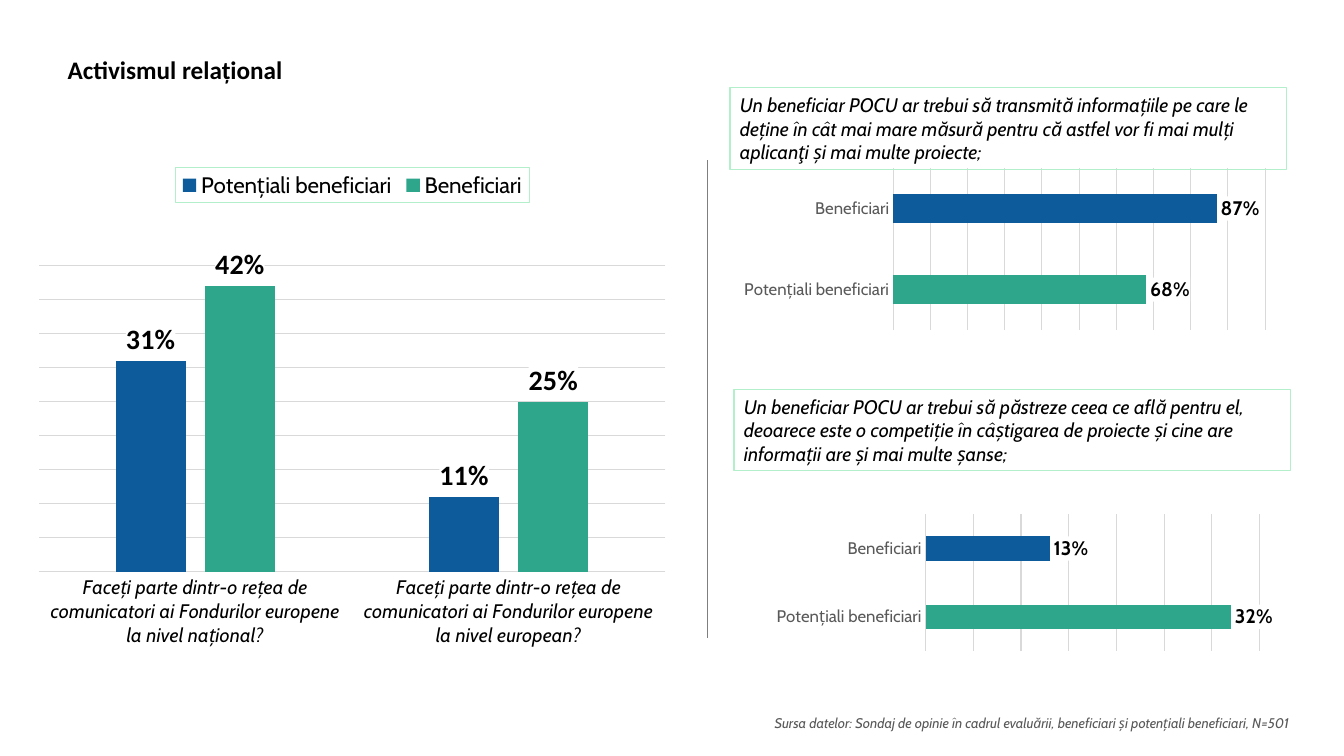
import pptx
import pptx.chart.data
import pptx.dml.color
import pptx.enum.chart
import pptx.enum.shapes
import pptx.enum.text
import pptx.oxml
import pptx.oxml.ns
import pptx.util
from pptx.util import Inches

BLUE, GREEN, MINT = "0D5B9B", "2EA68B", "B4EFCC"
BLACK, GREY, GRID, WHITE = "000000", "595959", "D9D9D9", "FFFFFF"
NS = pptx.oxml.ns.nsdecls("a", "c")


def rgb(value):
    return pptx.dml.color.RGBColor.from_string(value)


def style_font(font, size, color=BLACK, name="Cabin", bold=False, italic=False):
    font.size = pptx.util.Pt(size)
    font.name = name
    font.bold = bold
    font.italic = italic
    font.color.rgb = rgb(color)


def style_line(line, color, width):
    line.color.rgb = rgb(color)
    line.width = pptx.util.Pt(width)


def add_run(p, text, size, **style):
    r = p.add_run()
    r.text = text
    style_font(r.font, size, **style)


def add_title(s, text):
    sp = s.shapes.title
    sp.left, sp.top = Inches(0.67), Inches(0.3)
    sp.width, sp.height = Inches(12), Inches(0.78)
    tf = sp.text_frame
    tf.margin_left = tf.margin_right = tf.margin_top = tf.margin_bottom = 0
    tf.vertical_anchor = pptx.enum.text.MSO_ANCHOR.MIDDLE
    p = tf.paragraphs[0]
    p.alignment = pptx.enum.text.PP_ALIGN.LEFT
    add_run(p, text, 18, name="Calibri", bold=True)


def add_statement(s, left, top, text):
    sp = s.shapes.add_shape(pptx.enum.shapes.MSO_SHAPE.RECTANGLE,
                            Inches(left), Inches(top), Inches(5.52), Inches(0.81))
    sp.shadow.inherit = False
    sp.fill.background()
    style_line(sp.line, MINT, 0.75)
    tf = sp.text_frame
    tf.word_wrap = True
    p = tf.paragraphs[0]
    p.alignment = pptx.enum.text.PP_ALIGN.LEFT
    add_run(p, text, 14, italic=True)


def add_source(s, text):
    sp = s.shapes.add_textbox(Inches(5.24), Inches(7.04), Inches(7.64), Inches(0.27))
    tf = sp.text_frame
    tf.word_wrap = True
    p = tf.paragraphs[0]
    p.alignment = pptx.enum.text.PP_ALIGN.RIGHT
    add_run(p, text, 10, color=GREY, italic=True)


def add_divider(s):
    line = s.shapes.add_connector(pptx.enum.shapes.MSO_CONNECTOR.STRAIGHT,
                                  Inches(7.01), Inches(1.59), Inches(7.01), Inches(6.33))
    style_line(line.line, "7F7F7F", 0.25)
    line._element.spPr.append(pptx.oxml.parse_xml(f"<a:effectLst {NS}/>"))


def set_frame(element, fill_xml, line_xml=""):
    """Give a legend or a group of labels a fill and a border."""
    frame = pptx.oxml.parse_xml(f"<c:spPr {NS}>{fill_xml}{line_xml}</c:spPr>")
    element.find(pptx.oxml.ns.qn("c:txPr")).addprevious(frame)


def set_plot_area(chart, x, y, w, h):
    plot_area = chart._chartSpace.chart.plotArea
    for old in plot_area.findall(pptx.oxml.ns.qn("c:layout")):
        plot_area.remove(old)
    sizes = "".join(f'<c:{tag} val="{v}"/>' for tag, v in zip("xywh", (x, y, w, h)))
    plot_area.insert(0, pptx.oxml.parse_xml(
        f'<c:layout {NS}><c:manualLayout><c:layoutTarget val="inner"/>'
        f'<c:xMode val="edge"/><c:yMode val="edge"/>{sizes}'
        "</c:manualLayout></c:layout>"))


def add_bar_chart(s, kind, box, plot_box, cats, series, top, step, gap, overlap=0):
    data = pptx.chart.data.CategoryChartData(number_format="0%")
    data.categories = cats
    for name, values in series:
        data.add_series(name, values)
    chart = s.shapes.add_chart(kind, *map(Inches, box), data).chart
    style_font(chart.font, 10)
    chart.has_title = False
    chart.has_legend = False
    set_plot_area(chart, *plot_box)

    # Axes
    value_axis = chart.value_axis
    value_axis.minimum_scale, value_axis.maximum_scale = 0, top
    value_axis.major_unit = step
    value_axis.visible = False
    style_line(value_axis.major_gridlines.format.line, GRID, 0.75)
    cat_axis = chart.category_axis
    cat_axis.major_tick_mark = pptx.enum.chart.XL_TICK_MARK.NONE
    style_line(cat_axis.format.line, GRID, 0.75)

    # Bars
    plot = chart.plots[0]
    plot.gap_width, plot.overlap = gap, overlap
    plot.vary_by_categories = False
    for ser, color in zip(plot.series, (BLUE, GREEN)):
        ser.format.fill.solid()
        ser.format.fill.fore_color.rgb = rgb(color)
    return chart


def add_labels(chart, size, name):
    for ser in chart.plots[0].series:
        labels = ser.data_labels
        labels.show_value = True
        labels.number_format = "0%"
        labels.number_format_is_linked = False
        labels.position = pptx.enum.chart.XL_LABEL_POSITION.OUTSIDE_END
        style_font(labels.font, size, name=name, bold=True)
        set_frame(labels._element,
                  f'<a:solidFill><a:srgbClr val="{WHITE}"/></a:solidFill>')


def add_network_chart(s):
    question = "Faceți parte dintr-o rețea de comunicatori ai Fondurilor europene la nivel {}?"
    chart = add_bar_chart(
        s, pptx.enum.chart.XL_CHART_TYPE.COLUMN_CLUSTERED,
        (0.24, 1.59, 6.51, 5.09), (0.022, 0.205, 0.955, 0.597),
        [question.format(level) for level in ("național", "european")],
        [("Potențiali beneficiari", (0.31, 0.11)), ("Beneficiari", (0.42, 0.25))],
        0.45, 0.05, 219, -27)
    style_font(chart.category_axis.tick_labels.font, 14, italic=True)
    add_labels(chart, 20, "Calibri")
    chart.has_legend = True
    legend = chart.legend
    legend.position = pptx.enum.chart.XL_LEGEND_POSITION.TOP
    legend.include_in_layout = False
    style_font(legend.font, 16)
    set_frame(legend._element, "<a:noFill/>",
              f'<a:ln w="9525"><a:solidFill><a:srgbClr val="{MINT}"/></a:solidFill></a:ln>')


def add_agreement_chart(s, box, plot_box, values, top, step):
    chart = add_bar_chart(s, pptx.enum.chart.XL_CHART_TYPE.BAR_CLUSTERED, box, plot_box,
                          ("Beneficiari", "Potențiali beneficiari"),
                          [("Series 1", values)], top, step, 182)
    chart.category_axis.reverse_order = True
    style_font(chart.category_axis.tick_labels.font, 12, color=GREY)
    fill = chart.plots[0].series[0].points[1].format.fill
    fill.solid()
    fill.fore_color.rgb = rgb(GREEN)
    add_labels(chart, 14, "Cabin")


def main():
    prs = pptx.Presentation()
    prs.slide_width, prs.slide_height = Inches(13.33), Inches(7.5)
    s = prs.slides.add_slide(prs.slide_layouts[5])
    add_title(s, "Activismul relațional")

    # Left: membership of networks
    add_network_chart(s)
    add_divider(s)

    # Right: agreement with two statements
    add_agreement_chart(s, (7.28, 1.65, 5.37, 1.66), (0.294, 0.01, 0.687, 0.97),
                        (0.87, 0.68), 1, 0.1)
    add_statement(s, 7.24, 0.87, "Un beneficiar POCU ar trebui să transmită informațiile pe "
                  "care le deține în cât mai mare măsură pentru că astfel vor fi mai mulți "
                  "aplicanţi și mai multe proiecte;")
    add_agreement_chart(s, (7.43, 4.95, 5.37, 1.66), (0.326, 0.092, 0.617, 0.816),
                        (0.13, 0.32), 0.35, 0.05)
    add_statement(s, 7.28, 3.86, "Un beneficiar POCU ar trebui să păstreze ceea ce află pentru "
                  "el, deoarece este o competiție în câștigarea de proiecte și cine are "
                  "informații are și mai multe șanse;")

    add_source(s, "Sursa datelor: Sondaj de opinie în cadrul evaluării, beneficiari și "
               "potențiali beneficiari, N=501")
    prs.save("out.pptx")


if __name__ == "__main__":
    main()
